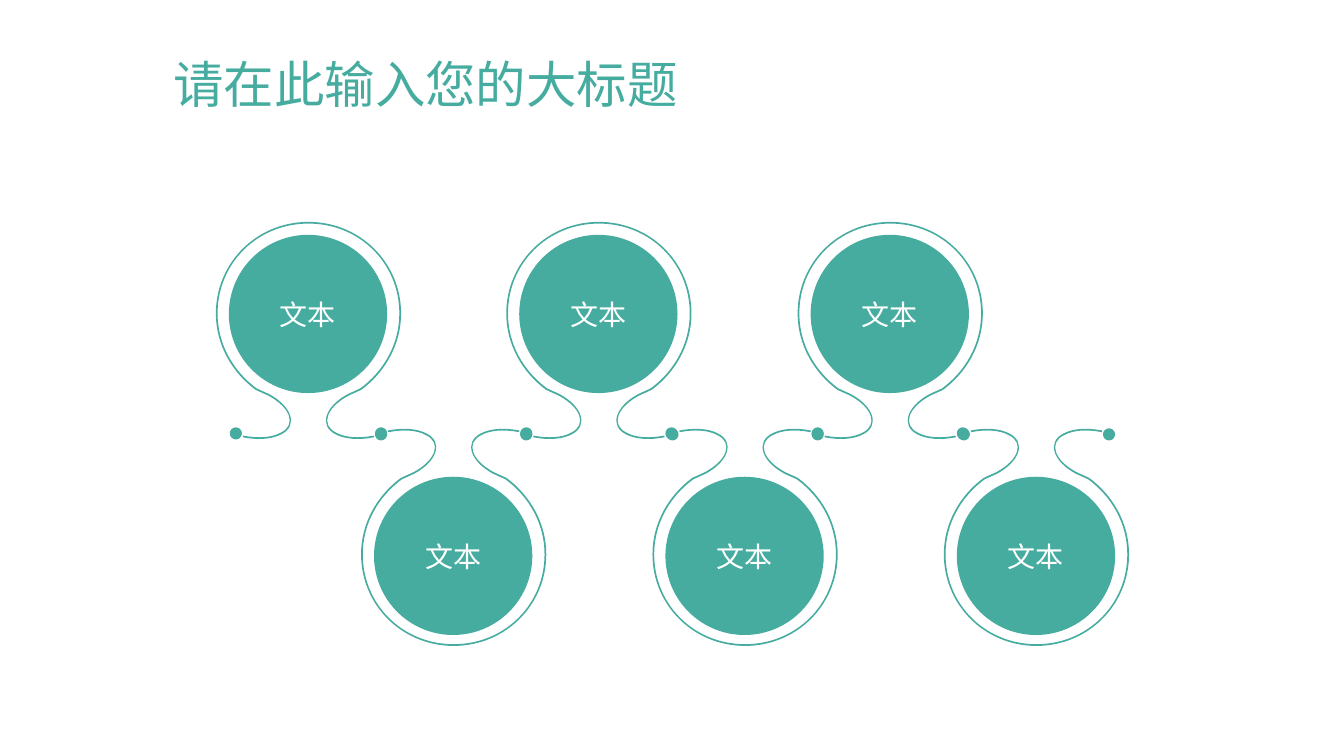
from math import hypot

from lxml.etree import SubElement
from pptx import Presentation
from pptx.dml.color import RGBColor
from pptx.enum.shapes import MSO_SHAPE
from pptx.enum.text import MSO_ANCHOR, MSO_AUTO_SIZE, PP_ALIGN
from pptx.oxml.ns import qn
from pptx.util import Pt

PX = 9144
TEAL = RGBColor(0x46, 0xAC, 0xA0)
WHITE = RGBColor(0xFF, 0xFF, 0xFF)
FONT = "Noto Sans CJK SC"

LOOP_H = 216
DISC = 157
DOT_R = 6
DOT_X, DOT_Y = 72, 210
ARC = 0.55
HALF_W = 0.85
TRACK = [
    (0, 1),
    (51, 1), (91, 41), (91, 91),
    (91, 122), (75, 149), (52, 166),
    (48, 168), (43, 170), (39, 172),
    (17, 184), (11, 202), (27, 210),
    (36, 215), (50, 216), (65, 213),
]


def write(shape, text, size, color, align=PP_ALIGN.LEFT, spacing=1.0):
    """Put one formatted paragraph in a shape, centred vertically."""
    frame = shape.text_frame
    frame.word_wrap = True
    frame.auto_size = MSO_AUTO_SIZE.NONE
    frame.vertical_anchor = MSO_ANCHOR.MIDDLE
    para = frame.paragraphs[0]
    para.alignment = align
    para.line_spacing = spacing
    run = para.add_run()
    run.text = text
    run.font.size = Pt(size)
    run.font.color.rgb = color
    run.font.name = FONT
    SubElement(run.font._element, qn("a:ea")).set("typeface", FONT)


def paint(shape):
    """Give a shape a plain teal fill with no line or shadow."""
    shape.shadow.inherit = False
    shape.fill.solid()
    shape.fill.fore_color.rgb = TEAL
    shape.line.fill.background()


def ribbon():
    """Return the curve points around the thin band that circles a disc."""
    track = [(-x, y) for x, y in TRACK[:0:-1]] + TRACK
    outer, inner = [], []
    for i, (x, y) in enumerate(track):
        ax, ay = track[max(i - 1, 0)]
        bx, by = track[min(i + 1, len(track) - 1)]
        size = hypot(bx - ax, by - ay)
        nx, ny = (by - ay) / size * HALF_W, (ax - bx) / size * HALF_W
        outer.append((x + nx, y + ny))
        inner.append((x - nx, y - ny))
    back = inner[::-1]
    return outer + back[:1] * 2 + back


def dot(mid):
    """Return the curve points of an end dot centred at mid."""
    ring = [(1, 0)]
    for c, s in ((1, 0), (0, 1), (-1, 0), (0, -1)):
        ring += [(c * x - s * y, s * x + c * y)
                 for x, y in ((1, ARC), (ARC, 1), (0, 1))]
    return [(mid + DOT_R * x, DOT_Y + DOT_R * y) for x, y in ring]


def curve(shape):
    """Turn each three straight segments of a freeform into one cubic."""
    lines = list(shape._element.iter(qn("a:lnTo")))
    for i in range(0, len(lines), 3):
        bend = SubElement(lines[i].getparent(), qn("a:cubicBezTo"))
        lines[i].addprevious(bend)
        for line in lines[i:i + 3]:
            bend.append(line[0])
            line.getparent().remove(line)


def draw_loop(slide, mid, top, flip):
    """Draw a band and its two end dots, opening down or, if flipped, up."""
    def place(point):
        x, y = point
        return (mid + x) * PX, (top + (LOOP_H - y if flip else y)) * PX

    build = None
    for outline in (dot(DOT_X), dot(-DOT_X), ribbon()):
        points = [place(p) for p in outline]
        if build is None:
            build = slide.shapes.build_freeform(*points[0])
        else:
            build.move_to(*points[0])
        build.add_line_segments(points[1:], close=True)
    loop = build.convert_to_shape()
    curve(loop)
    paint(loop)


def draw_disc(slide, mid, top, text):
    """Draw a labelled disc centred on mid."""
    disc = slide.shapes.add_shape(MSO_SHAPE.OVAL, (mid - 79) * PX, top * PX,
                                  DISC * PX, DISC * PX)
    paint(disc)
    write(disc, text, 20, WHITE, align=PP_ALIGN.CENTER)


def draw_chain(slide, left, top, span, labels):
    """Draw the chain of loops, alternating between an upper and lower row."""
    last = len(labels) - 1
    mids = [left + span * i // last for i in range(last + 1)]
    for i, mid in enumerate(mids):
        draw_loop(slide, mid, top + i % 2 * 205, flip=i % 2 == 1)
    for row in (0, 1):
        for mid, text in list(zip(mids, labels))[row::2]:
            draw_disc(slide, mid, top + 13 + row * 240, text)


def draw_title(slide, left, top, width, height, text):
    """Place and fill the title."""
    title = slide.shapes.title
    title.left, title.top = left * PX, top * PX
    title.width, title.height = width * PX, height * PX
    write(title, text, 36, TEAL, spacing=0.9)


def main():
    """Build the slide and save it."""
    deck = Presentation()
    deck.slide_width, deck.slide_height = 1333 * PX, 750 * PX
    slide = deck.slides.add_slide(deck.slide_layouts[5])
    draw_title(slide, 162, 40, 1088, 93, "请在此输入您的大标题")
    draw_chain(slide, 306, 220, 722, ["文本"] * 6)
    deck.save("out.pptx")


if __name__ == "__main__":
    main()
